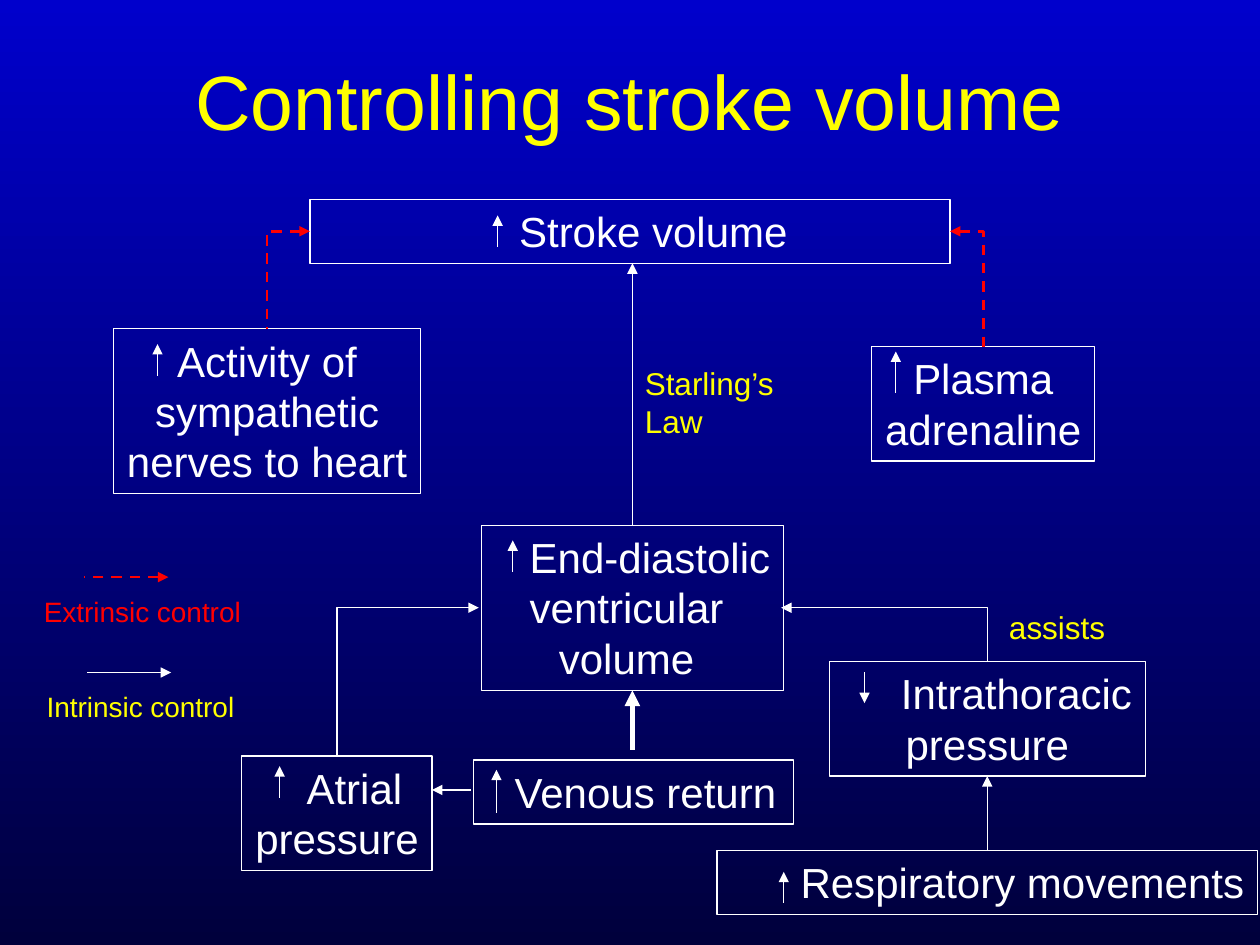
from lxml import etree
from pptx import Presentation
from pptx.dml.color import RGBColor
from pptx.enum.dml import MSO_LINE
from pptx.enum.shapes import MSO_CONNECTOR, MSO_SHAPE
from pptx.enum.text import MSO_ANCHOR, PP_ALIGN
from pptx.oxml.ns import qn
from pptx.util import Pt

STRAIGHT, ELBOW = MSO_CONNECTOR.STRAIGHT, MSO_CONNECTOR.ELBOW
RECTANGLE = MSO_SHAPE.RECTANGLE
DASH = MSO_LINE.DASH
TOP, MIDDLE = MSO_ANCHOR.TOP, MSO_ANCHOR.MIDDLE
LEFT, CENTER = PP_ALIGN.LEFT, PP_ALIGN.CENTER

NAVY = RGBColor(0x00, 0x00, 0x3C)
BLUE = RGBColor(0x00, 0x00, 0xCC)
WHITE = RGBColor(0xFF, 0xFF, 0xFF)
YELLOW = RGBColor(0xFF, 0xFF, 0x00)
RED = RGBColor(0xFF, 0x00, 0x00)

SPACE = 6.67

FACTORS = {
    "stroke": ((177.1, 113.8, 365.8, 36.7),
               [("Stroke volume", 4 * SPACE)], (107.3, 27.3, 9.3)),
    "nerves": ((64.8, 187.9, 175.7, 94.3),
               [("Activity of", 0), ("sympathetic", 0), ("nerves to heart", 0)],
               (25.2, 26.7, 8.7)),
    "adrenaline": ((498.2, 198, 127.4, 65.5),
                   [("Plasma", 0), ("adrenaline", 0)], (13.7, 26.6, 2.9)),
    "ventricle": ((275, 300.2, 172.8, 94.3),
                  [("End-diastolic", 3 * SPACE), ("ventricular", -SPACE), ("volume", 0)],
                  (18, 26.6, 8.6)),
    "venous": ((270.7, 434.2, 182.9, 36.7),
               [("Venous return", 2 * SPACE)], (13, 30.2, 5.7)),
    "atrial": ((138.2, 432, 108.7, 65.5),
               [("Atrial", 3 * SPACE), ("pressure", 0)], (21.6, 23.8, 5.8)),
    "respiratory": ((409.7, 486, 308.9, 36.7),
                    [("Respiratory movements", 6 * SPACE)], (38.2, 30.2, 12.2)),
    "thoracic": ((473.8, 378, 180.7, 65.5),
                 [("Intrathoracic", 5 * SPACE), ("pressure", 0)], (20.2, 5.8, 23.8)),
}


def set_background(slide):
    """Fill the slide with a blue gradient that darkens downwards."""
    fill = slide.background.fill
    fill.gradient()
    fill.gradient_angle = 270
    for stop, color in zip(fill.gradient_stops, (BLUE, NAVY)):
        stop.color.rgb = color


def add_arrow(slide, tail, tip, color=WHITE, weight=0.75, dash=None, kind=STRAIGHT):
    """Draw an arrow from tail to tip; an elbow reaches the tip horizontally."""
    arrow = slide.shapes.add_connector(kind, *map(Pt, (*tip, *tail)))
    arrow.line.color.rgb = color
    arrow.line.width = Pt(weight)
    if dash:
        arrow.line.dash_style = dash
    properties = arrow._element.spPr
    if kind == ELBOW:
        properties.find(qn("a:prstGeom")).set("prst", "bentConnector2")
    line = properties.find(qn("a:ln"))
    etree.SubElement(line, qn("a:headEnd"), type="triangle")
    etree.SubElement(properties, qn("a:effectLst"))


def write_lines(shape, lines, size, color, align=LEFT, anchor=TOP, wrap=False):
    """Write (text, indent) lines; a negative indent is kept free on the right."""
    frame = shape.text_frame
    frame.word_wrap = wrap
    frame.vertical_anchor = anchor
    frame.text = "\n".join(text for text, _ in lines)
    for paragraph, (_, indent) in zip(frame.paragraphs, lines):
        paragraph.alignment = align
        paragraph.font.name = "Arial"
        paragraph.font.size = Pt(size)
        paragraph.font.color.rgb = color
        if indent:
            side = "marL" if indent > 0 else "marR"
            paragraph._p.get_or_add_pPr().set(side, str(Pt(abs(indent))))


def add_label(slide, box, lines, size, color=YELLOW, **layout):
    """Place plain text in the given box."""
    label = slide.shapes.add_textbox(*map(Pt, box))
    write_lines(label, [(line, 0) for line in lines], size, color, **layout)


def add_factor(slide, box, lines, indicator):
    """Draw an outlined factor with its rise or fall indicator."""
    shape = slide.shapes.add_shape(RECTANGLE, *map(Pt, box))
    shape.shadow.inherit = False
    shape.fill.background()
    shape.line.color.rgb = WHITE
    shape.line.width = Pt(0.75)
    write_lines(shape, lines, 24, WHITE, CENTER)
    left, top = box[:2]
    x, tail, tip = indicator
    add_arrow(slide, (left + x, top + tail), (left + x, top + tip))


def add_legend_entry(slide, left, top, width, text, text_color, **style):
    """Draw a sample arrow above its caption."""
    add_arrow(slide, (left + 30.2, top), (left + 78.2, top), **style)
    add_label(slide, (left, top + 6.2, width, 26.6), [text], 16, text_color)


def edge(name, x, y):
    """Return the point at the given fractions of a factor's box."""
    left, top, width, height = FACTORS[name][0]
    return left + x * width, top + y * height


def add_links(slide):
    """Join the factors with extrinsic and intrinsic arrows."""
    extrinsic = {"color": RED, "weight": 1.5, "dash": DASH, "kind": ELBOW}
    add_arrow(slide, edge("nerves", 0.5, 0), edge("stroke", 0, 0.5), **extrinsic)
    add_arrow(slide, edge("adrenaline", 0.5, 0), edge("stroke", 1, 0.5), **extrinsic)
    add_arrow(slide, edge("atrial", 0.5, 0), (273.6, 347.3), kind=ELBOW)
    add_arrow(slide, edge("thoracic", 0.5, 0), (446.4, 347.3), kind=ELBOW)
    axis, ventricle_top = edge("ventricle", 0.5, 0)
    add_arrow(slide, (axis, ventricle_top), (axis, edge("stroke", 0, 1)[1]))
    add_arrow(slide, (axis, 428.8), edge("ventricle", 0.5, 1), weight=3)
    add_arrow(slide, edge("respiratory", 0.5, 0), edge("thoracic", 0.5, 1))
    atrial_right = edge("atrial", 1, 0)[0]
    add_arrow(slide, (269.3, 451.4), (atrial_right, 451.4))


def main():
    """Build and save the slide."""
    presentation = Presentation()
    presentation.slide_width, presentation.slide_height = Pt(720), Pt(540)
    slide = presentation.slides.add_slide(presentation.slide_layouts[6])
    set_background(slide)
    add_label(slide, (54, 18, 612, 78), ["Controlling stroke volume"], 44,
              align=CENTER, anchor=MIDDLE, wrap=True)
    for factor in FACTORS.values():
        add_factor(slide, *factor)
    add_links(slide)
    add_label(slide, (361.4, 204.5, 88.6, 50.4), ["Starling’s", "Law"], 18)
    add_label(slide, (569.5, 343.7, 79.2, 28.8), ["assists"], 18, wrap=True)
    add_legend_entry(slide, 18, 329.8, 127.4, "Extrinsic control", RED,
                     color=RED, weight=1.5, dash=DASH)
    add_legend_entry(slide, 19.6, 384.3, 122.4, "Intrinsic control", YELLOW)
    presentation.save("out.pptx")


if __name__ == "__main__":
    main()
